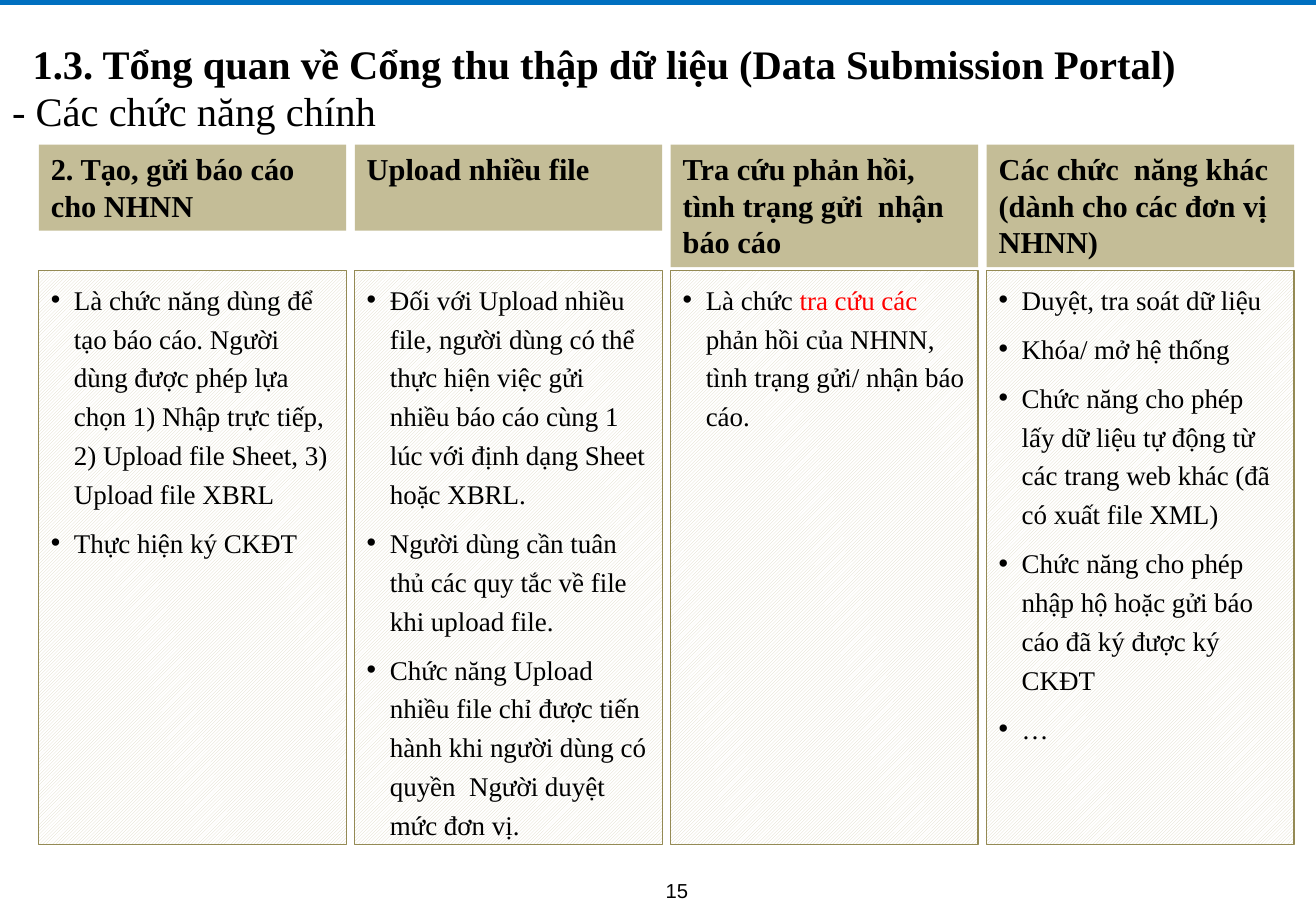
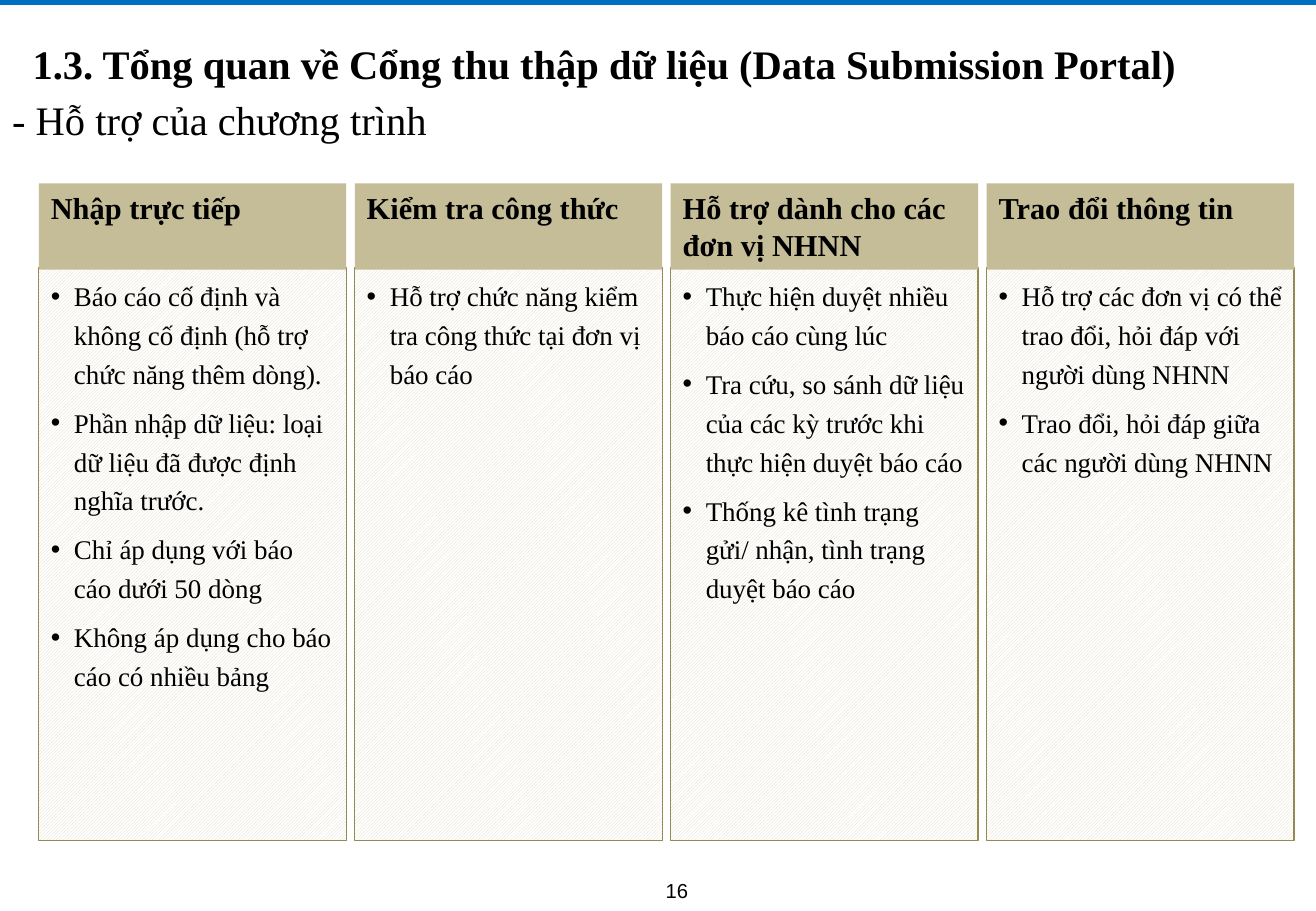
from lxml import etree
from pptx import Presentation
from pptx.dml.color import RGBColor
from pptx.enum.dml import MSO_PATTERN
from pptx.enum.shapes import MSO_SHAPE
from pptx.enum.text import MSO_ANCHOR, MSO_AUTO_SIZE, PP_ALIGN
from pptx.oxml.ns import qn
from pptx.util import Inches, Pt

COLORS = {
    "text": "000000",
    "accent": "FF0000",
    "band": "0070C0",
    "header": "C4BD97",
    "hatch": "DDD9C3",
    "paper": "FFFFFF",
    "border": "948A54",
}
SERIF, SANS = "Times New Roman", "Arial"
SLIDE_W, SLIDE_H = 10.83, 7.5
COL_LEFT, COL_PITCH, COL_W, BODY_H = 0.32, 2.6, 2.53, 4.72
HEADING = "1.3. Tổng quan về Cổng thu thập dữ liệu (Data Submission Portal)"

SLIDES = [
    {
        "number": "15",
        "title": "- Các chức năng chính",
        "title_top": 0.65,
        "header_top": 1.19,
        "body_top": 2.23,
        "columns": [
            ("2. Tạo, gửi báo cáo cho NHNN", 0.71, [
                "Là chức năng dùng để tạo báo cáo. Người dùng được phép lựa chọn "
                "1) Nhập trực tiếp, 2) Upload file Sheet, 3) Upload file XBRL",
                "Thực hiện ký CKĐT",
            ]),
            ("Upload nhiều file", 0.71, [
                "Đối với Upload nhiều file, người dùng có thể thực hiện việc gửi "
                "nhiều báo cáo cùng 1 lúc với định dạng Sheet hoặc XBRL.",
                "Người dùng cần tuân thủ các quy tắc về file khi upload file.",
                "Chức năng Upload nhiều file chỉ được tiến hành khi người dùng có "
                "quyền  Người duyệt mức đơn vị.",
            ]),
            ("Tra cứu phản hồi, tình trạng gửi  nhận báo cáo", 1.01, [
                [("Là chức ", "text"), ("tra cứu các ", "accent"),
                 ("phản hồi của NHNN, tình trạng gửi/ nhận báo cáo.", "text")],
            ]),
            ("Các chức  năng khác (dành cho các đơn vị NHNN)", 1.01, [
                "Duyệt, tra soát dữ liệu",
                "Khóa/ mở hệ thống",
                "Chức năng cho phép lấy dữ liệu tự động từ các trang web khác "
                "(đã có xuất file XML)",
                "Chức năng cho phép nhập hộ hoặc gửi báo cáo đã ký được ký CKĐT",
                "…",
            ]),
        ],
    },
    {
        "number": "16",
        "title": "- Hỗ trợ của chương trình",
        "title_top": 0.72,
        "header_top": 1.51,
        "body_top": 2.2,
        "columns": [
            ("Nhập trực tiếp", 0.71, [
                "Báo cáo cố định và không cố định (hỗ trợ chức năng thêm dòng).",
                "Phần nhập dữ liệu: loại dữ liệu đã được định nghĩa trước.",
                "Chỉ áp dụng với báo cáo dưới 50 dòng",
                "Không áp dụng cho báo cáo có nhiều bảng",
            ]),
            ("Kiểm tra công thức", 0.71, [
                "Hỗ trợ chức năng kiểm tra công thức tại đơn vị báo cáo",
            ]),
            ("Hỗ trợ dành cho các đơn vị NHNN", 0.71, [
                "Thực hiện duyệt nhiều báo cáo cùng lúc",
                "Tra cứu, so sánh dữ liệu của các kỳ trước khi thực hiện duyệt báo cáo",
                "Thống kê tình trạng gửi/ nhận, tình trạng duyệt báo cáo",
            ]),
            ("Trao đổi thông tin", 0.71, [
                "Hỗ trợ các đơn vị có thể trao đổi, hỏi đáp với người dùng NHNN",
                "Trao đổi, hỏi đáp giữa các người dùng NHNN",
            ]),
        ],
    },
]


def rgb(name):
    return RGBColor.from_string(COLORS[name])


def add_run(p, text, size, font=SERIF, bold=False, color="text"):
    r = p.add_run()
    r.text = text
    r.font.name = font
    r.font.size = Pt(size)
    r.font.bold = bold
    r.font.color.rgb = rgb(color)


def set_frame(sp, anchor=MSO_ANCHOR.TOP, align=PP_ALIGN.LEFT):
    tf = sp.text_frame
    tf.word_wrap = True
    tf.auto_size = MSO_AUTO_SIZE.NONE
    tf.vertical_anchor = anchor
    tf.paragraphs[0].alignment = align
    return tf


def add_box(slide, left, top, width, height):
    sp = slide.shapes.add_shape(MSO_SHAPE.RECTANGLE, Inches(left), Inches(top),
                                Inches(width), Inches(height))
    sp.shadow.inherit = False
    return sp


def add_solid(slide, left, top, width, height, color):
    sp = add_box(slide, left, top, width, height)
    sp.fill.solid()
    sp.fill.fore_color.rgb = rgb(color)
    sp.line.fill.background()
    return sp


def add_label(slide, left, top, width, height, text, size, font=SERIF, bold=False,
              anchor=MSO_ANCHOR.TOP, align=PP_ALIGN.LEFT):
    sp = slide.shapes.add_textbox(Inches(left), Inches(top), Inches(width), Inches(height))
    tf = set_frame(sp, anchor, align)
    add_run(tf.paragraphs[0], text, size, font, bold)


def set_bullet(p):
    pPr = p._p.get_or_add_pPr()
    pPr.set("marL", str(Inches(0.19)))
    pPr.set("indent", str(-Inches(0.19)))
    etree.SubElement(pPr, qn("a:buFont")).set("typeface", SANS)
    etree.SubElement(pPr, qn("a:buChar")).set("char", "•")


def add_frame(slide, data):
    add_solid(slide, 0, -0.01, SLIDE_W, 0.05, "band")
    add_label(slide, 4.47, 7.18, 2.2, 0.26, data["number"], 12, SANS,
              align=PP_ALIGN.CENTER)
    title = slide.shapes.title
    title.left, title.top = Inches(0), Inches(data["title_top"])
    title.width, title.height = Inches(SLIDE_W), Inches(0.52)
    tf = set_frame(title, MSO_ANCHOR.MIDDLE)
    add_run(tf.paragraphs[0], data["title"], 24)
    add_label(slide, 0.17, 0.26, SLIDE_W, 0.52, HEADING, 24, bold=True,
              anchor=MSO_ANCHOR.MIDDLE)


def add_body(slide, left, top, items):
    sp = add_box(slide, left, top, COL_W, BODY_H)
    sp.fill.patterned()
    sp.fill.pattern = MSO_PATTERN.LIGHT_UPWARD_DIAGONAL
    sp.fill.fore_color.rgb = rgb("hatch")
    sp.fill.back_color.rgb = rgb("paper")
    sp.line.color.rgb = rgb("border")
    sp.line.width = Pt(0.75)
    tf = set_frame(sp)
    for i, item in enumerate(items):
        p = tf.add_paragraph() if i else tf.paragraphs[0]
        p.alignment = PP_ALIGN.LEFT
        p.line_spacing = 1.2
        if i:
            p.space_before = Pt(6)
        set_bullet(p)
        runs = [(item, "text")] if isinstance(item, str) else item
        for text, color in runs:
            add_run(p, text, 16, color=color)


def add_header(slide, left, top, height, text):
    sp = add_solid(slide, left, top, COL_W, height, "header")
    add_run(set_frame(sp).paragraphs[0], text, 18, bold=True)


def add_column_slide(prs, data):
    slide = prs.slides.add_slide(prs.slide_layouts.get_by_name("Title Only"))
    add_frame(slide, data)
    for i, (header, header_h, items) in enumerate(data["columns"]):
        left = COL_LEFT + i * COL_PITCH
        add_body(slide, left, data["body_top"], items)
        add_header(slide, left, data["header_top"], header_h, header)


def main():
    prs = Presentation()
    prs.slide_width, prs.slide_height = Inches(SLIDE_W), Inches(SLIDE_H)
    for data in SLIDES:
        add_column_slide(prs, data)
    prs.save("out.pptx")


if __name__ == "__main__":
    main()
